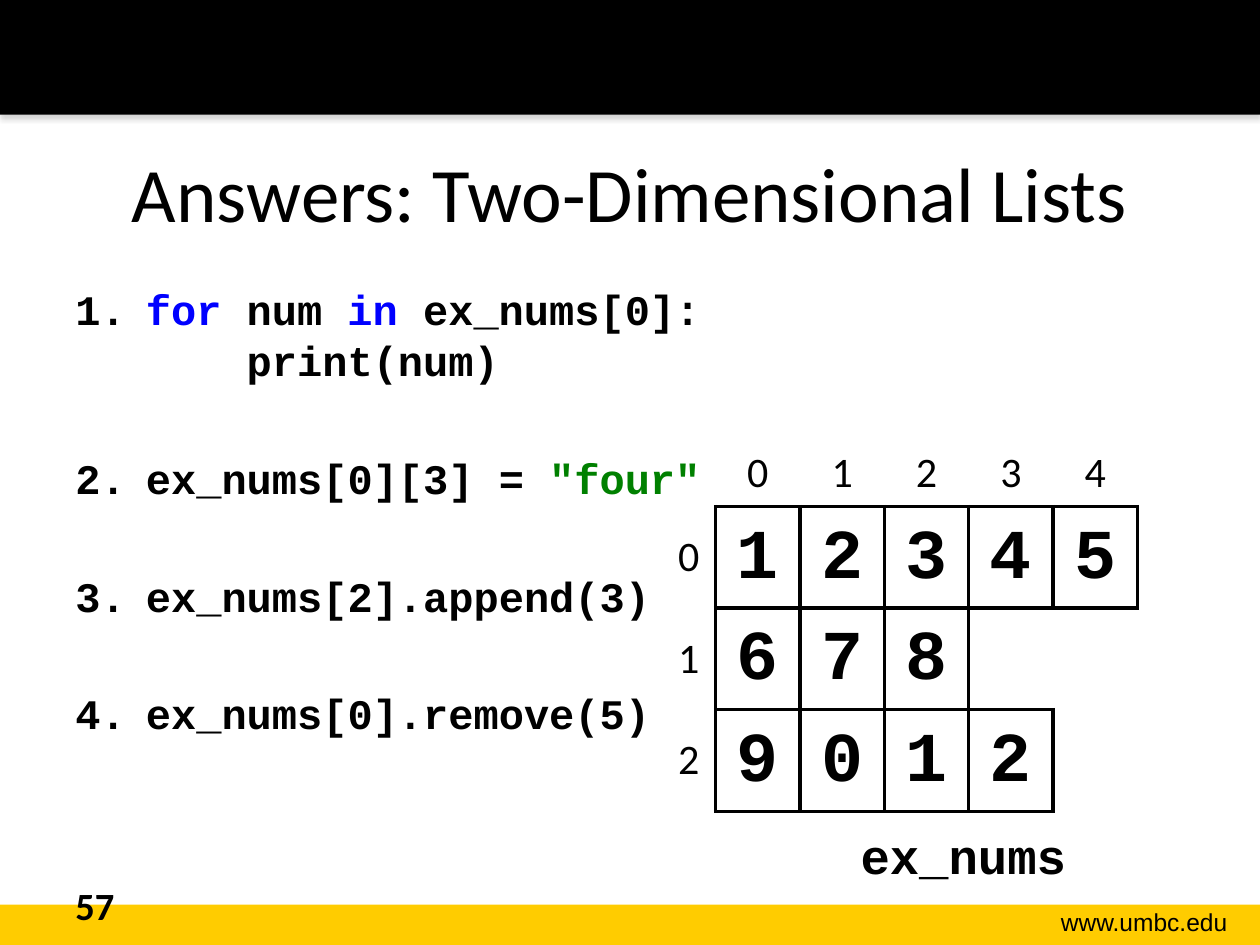
from lxml.etree import SubElement
from pptx import Presentation
from pptx.dml.color import RGBColor
from pptx.enum.shapes import MSO_SHAPE
from pptx.enum.text import MSO_ANCHOR, PP_ALIGN
from pptx.oxml import parse_xml
from pptx.oxml.ns import nsdecls, qn
from pptx.util import Inches, Pt

BLACK = RGBColor(0, 0, 0)
WHITE = RGBColor(255, 255, 255)
GOLD = RGBColor(255, 204, 0)
BLUE = RGBColor(0, 0, 255)
GREEN = RGBColor(0, 128, 0)

# Content
TITLE = "Answers: Two-Dimensional Lists"
ANSWERS = [
    [("for ", BLUE), ("num ", BLACK), ("in ", BLUE),
     ("ex_nums[0]:\v    print(num)", BLACK)],
    [("ex_nums[0][3] = ", BLACK), ('"four"', GREEN)],
    [("ex_nums[2].append(3)", BLACK)],
    [("ex_nums[0].remove(5)", BLACK)],
]
GRID = [[1, 2, 3, 4, 5], [6, 7, 8], [9, 0, 1, 2]]

# Text formats
HEAD = {"name": "Calibri", "size": Pt(44)}
CODE = {"name": "Courier New", "size": Pt(24), "bold": True}
DIGIT = {**CODE, "size": Pt(40)}
NAME = {**CODE, "size": Pt(28)}
INDEX = {"name": "Calibri", "size": Pt(24), "bold": False}
PAGE = {"name": "Calibri", "size": Pt(22), "bold": True}
SITE = {"name": "Arial", "size": Pt(14)}

LEFT, MID, RIGHT = PP_ALIGN.LEFT, PP_ALIGN.CENTER, PP_ALIGN.RIGHT

deck = Presentation()
deck.slide_width, deck.slide_height = Inches(10), Inches(7.5)
slide = deck.slides.add_slide(deck.slide_layouts[6])


def add_run(para, text, form, color=BLACK):
    # A vertical tab in the text becomes a line break
    for i, part in enumerate(text.split("\v")):
        if i:
            para.add_line_break()
        run = para.add_run()
        run.text = part
        for key, value in form.items():
            setattr(run.font, key, value)
        run.font.color.rgb = color


def add_bar(top, height, color):
    bar = slide.shapes.add_shape(MSO_SHAPE.RECTANGLE, 0, Inches(top),
                                 deck.slide_width, Inches(height))
    bar.shadow.inherit = False
    bar.fill.solid()
    bar.fill.fore_color.rgb = color
    bar.line.fill.background()
    return bar


def add_box(x, y, w, h, inset=0.05):
    box = slide.shapes.add_textbox(*map(Inches, (x, y, w, h)))
    frame = box.text_frame
    frame.word_wrap = True
    frame.margin_top = Inches(inset)
    return frame


def add_label(spot, text, form, align=LEFT, anchor=MSO_ANCHOR.TOP, inset=0.05):
    frame = add_box(*spot, inset)
    frame.vertical_anchor = anchor
    frame.paragraphs[0].alignment = align
    add_run(frame.paragraphs[0], text, form)


# Bars, the top one with a soft shadow
add_bar(7.18, 0.32, GOLD)
top = add_bar(0, 0.91, BLACK)
top._element.spPr.find(qn("a:effectLst")).append(parse_xml(
    f'<a:outerShdw {nsdecls("a")} blurRad="{Pt(3.1)}" dist="{Pt(1.8)}" '
    'dir="5400000" rotWithShape="0"><a:srgbClr val="808080">'
    '<a:alpha val="35000"/></a:srgbClr></a:outerShdw>'))

# Labels
add_label((7.85, 7.15, 1.99, 0.34), "www.umbc.edu", SITE, RIGHT)
add_label((0.5, 0.9, 9, 1.25), TITLE, HEAD, MID, MSO_ANCHOR.MIDDLE)
add_label((0.5, 6.95, 2.33, 0.4), "57", PAGE)

# Numbered answers
frame = add_box(0.5, 2.15, 9, 4.55, 0.09)
for i, parts in enumerate(ANSWERS):
    para = frame.paragraphs[0] if i == 0 else frame.add_paragraph()
    props = para._p.get_or_add_pPr()
    props.set("marL", str(Inches(0.56)))
    props.set("indent", str(-Inches(0.56)))
    tint = SubElement(props, qn("a:buClr"))
    SubElement(tint, qn("a:srgbClr"), val=str(BLACK))
    SubElement(props, qn("a:buFont"), typeface=CODE["name"])
    SubElement(props, qn("a:buAutoNum"), type="arabicPeriod")
    para.line_spacing = Pt(29.3)
    if i:
        para.space_before = Pt(38)
    for text, color in parts:
        add_run(para, text, CODE, color)

# Grid with row and column indices
rows, cols = len(GRID) + 1, max(map(len, GRID)) + 2
frame = slide.shapes.add_table(rows, cols, Inches(5.01), Inches(3.48),
                               Inches(0.67 * cols), Inches(2.81))
table = frame.table
table.first_row = table.horz_banding = False
table._tbl.tblPr.find(qn("a:tableStyleId")).text = (
    "{2D5ABB26-0587-4C30-8999-92F81FD0307C}")
for col in table.columns:
    col.width = Inches(0.67)
for r, row in enumerate(table.rows):
    row.height = Inches(0.76 if r else 0.53)


def add_edges(cell):
    for side in "LRTB":
        edge = SubElement(cell._tc.get_or_add_tcPr(), qn("a:ln" + side),
                          w=str(Pt(2.25)))
        fill = SubElement(edge, qn("a:solidFill"))
        SubElement(fill, qn("a:srgbClr"), val=str(BLACK))


def fill_cell(cell, text, form, align, anchor=MSO_ANCHOR.BOTTOM):
    cell.margin_left = cell.margin_right = Inches(0.13)
    cell.margin_top = cell.margin_bottom = Inches(0.07)
    cell.vertical_anchor = anchor
    para = cell.text_frame.paragraphs[0]
    para.alignment = align
    add_run(para, str(text), form)


for r in range(rows):
    for c in range(cols):
        cell = table.cell(r, c)
        if c == 0:
            cell.fill.background()
            if r:
                fill_cell(cell, r - 1, INDEX, RIGHT, MSO_ANCHOR.MIDDLE)
            continue
        if r == 0 and c < cols - 1:
            fill_cell(cell, c - 1, INDEX, MID)
        elif r and c <= len(GRID[r - 1]):
            fill_cell(cell, GRID[r - 1][c - 1], DIGIT, MID)
            add_edges(cell)
        cell.fill.solid()
        cell.fill.fore_color.rgb = WHITE

# Grid name
add_label((5.79, 6.42, 3.71, 0.57), "ex_nums", NAME, MID, inset=0.13)

deck.save("out.pptx")
